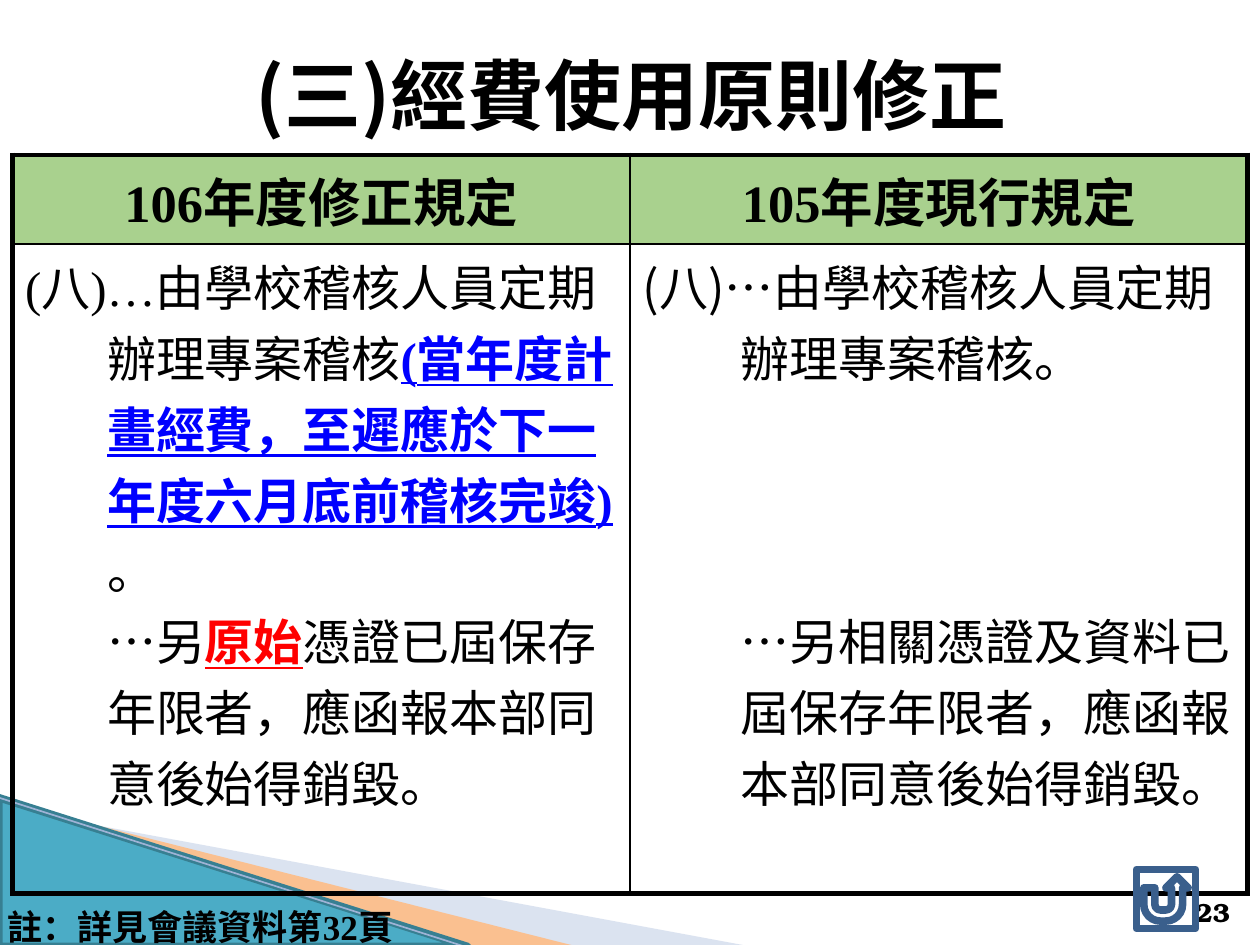
import pptx
import pptx.util
import pptx.dml.color
import pptx.enum.shapes
import pptx.enum.text
import pptx.oxml.ns
import lxml.etree

Pt = pptx.util.Pt
MID = pptx.enum.text.MSO_ANCHOR.MIDDLE
LOW = pptx.enum.text.MSO_ANCHOR.BOTTOM
ALIGN = pptx.enum.text.PP_ALIGN

THEME = {
    "black": "000000", "blue": "0000FF", "red": "FF0000", "head": "A9D18E",
    "teal": "4BACC6", "deep": "377F92", "pale": "A7B9DB", "peach": "FAC090",
    "ray": "9EB3D6", "icon": "3A5F8C",
    "sans": "Noto Sans CJK SC", "serif": "Times New Roman", "page": "TeX Gyre Bonum",
    "title": 44, "top": 30, "body": 28, "note": 20, "num": 15,
}

TITLE = "(三)經費使用原則修正"
HEADS = ["106年度修正規定", "105年度現行規定"]
NEW = {"color": "blue", "bold": True, "under": True}
KEY = {"color": "red", "bold": True, "under": True}
BODY = [
    {"font": "serif", "indent": 46.8, "paras": [
        (6, True, [("(八)…由學校稽核人員定期辦理專案稽核", {}),
                   ("(當年度計畫經費，至遲應於下一年度六月底前稽核完竣)", NEW)]),
        (0, False, [("。", {})]),
        (0, False, [("…另", {}), ("原始", KEY),
                    ("憑證已屆保存年限者，應函報本部同意後始得銷毀。", {})]),
    ]},
    {"font": "sans", "indent": 56.2, "paras": [
        (6, True, [("(八)…由學校稽核人員定期辦理專案稽核。", {})]),
        (121.5, False, [("…另相關憑證及資料已屆保存年限者，應函報本部同意後始得銷毀。", {})]),
    ]},
]
NOTE = "註：詳見會議資料第32頁"
PAGE = "23"
BANDS = [
    ("pale", 40, [(39.6, 468.7), (428.4, 540.7), (328.3, 540.7), (39.6, 468)]),
    ("peach", 100, [(38.2, 467.3), (329, 540.7), (267.8, 541.4), (38.9, 468)]),
]


def tone(name):
    return pptx.dml.color.RGBColor.from_string(THEME[name])


def sub(node, tag, **attrs):
    return lxml.etree.SubElement(node, pptx.oxml.ns.qn(tag), **attrs)


def write(para, text, size="body", font="serif", color="black", bold=False,
          under=False, align=None):
    run = para.add_run()
    run.text = text
    run.font.size = Pt(THEME[size])
    run.font.name = THEME[font]
    run.font.bold = bold
    run.font.underline = under
    run.font.color.rgb = tone(color)
    sub(run.font._element, "a:ea", typeface=THEME["sans"])
    if align is not None:
        para.alignment = align


def paint(shape, fill=None, line=None, width=4.33):
    shape.shadow.inherit = False
    if fill:
        shape.fill.solid()
        shape.fill.fore_color.rgb = tone(fill)
    else:
        shape.fill.background()
    if line:
        shape.line.color.rgb = tone(line)
        shape.line.width = Pt(width)
    else:
        shape.line.fill.background()


def edge(cell, row, col):
    props = cell._tc.get_or_add_tcPr()
    outer = {"L": col == 0, "R": col == 1, "T": row == 0, "B": row == 1}
    for spot, (side, thick) in enumerate(outer.items()):
        line = lxml.etree.Element(pptx.oxml.ns.qn("a:ln" + side), w=str(Pt(3 if thick else 1)))
        sub(sub(line, "a:solidFill"), "a:srgbClr", val=THEME["black"])
        props.insert(spot, line)


def decor(slide):
    for color, alpha, spots in BANDS:
        build = slide.shapes.build_freeform(*map(Pt, spots[0]))
        build.add_line_segments([(Pt(x), Pt(y)) for x, y in spots[1:]])
        band = build.convert_to_shape()
        paint(band, color)
        if alpha < 100:
            mark = band.fill._xPr.find(".//" + pptx.oxml.ns.qn("a:srgbClr"))
            sub(mark, "a:alpha", val=str(alpha * 1000))
    kind = pptx.enum.shapes.MSO_SHAPE.RIGHT_TRIANGLE
    wedge = slide.shapes.add_shape(kind, Pt(-0.7), Pt(455.8), Pt(267.8), Pt(85))
    paint(wedge, "teal", "deep")
    ray = slide.shapes.add_connector(pptx.enum.shapes.MSO_CONNECTOR.STRAIGHT,
                                     Pt(-0.7), Pt(455.8), Pt(267.1), Pt(541.4))
    ray.line.color.rgb = tone("ray")
    ray.line.width = Pt(0.95)
    sub(ray._element.spPr, "a:effectLst")


def grid(slide):
    frame = slide.shapes.add_table(2, 2, Pt(7.2), Pt(88.6), Pt(705.6), Pt(334.8))
    table = frame.table
    table.first_row = table.horz_banding = False
    for row, high in zip(table.rows, (49.7, 285.1)):
        row.height = Pt(high)
    for col, (head, body) in enumerate(zip(HEADS, BODY)):
        top, cell = table.cell(0, col), table.cell(1, col)
        top.fill.solid()
        top.fill.fore_color.rgb = tone("head")
        top.vertical_anchor = MID
        write(top.text_frame.paragraphs[0], head, "top", bold=True, align=ALIGN.CENTER)
        cell.fill.background()
        for rank, (gap, hang, runs) in enumerate(body["paras"]):
            text = cell.text_frame
            para = text.add_paragraph() if rank else text.paragraphs[0]
            para.space_before = Pt(gap)
            props = para._p.get_or_add_pPr()
            props.set("marL", str(Pt(body["indent"])))
            props.set("indent", str(-Pt(body["indent"]) if hang else 0))
            for words, style in runs:
                write(para, words, font=body["font"], **style)
        edge(top, 0, col)
        edge(cell, 1, col)


def label(slide, box, text, anchor=None, wrap=True, **style):
    frame = slide.shapes.add_textbox(*map(Pt, box)).text_frame
    frame.word_wrap = wrap
    if anchor is not None:
        frame.vertical_anchor = anchor
    write(frame.paragraphs[0], text, bold=True, **style)


def main():
    deck = pptx.Presentation()
    deck.slide_width, deck.slide_height = Pt(720), Pt(540)
    slide = deck.slides.add_slide(deck.slide_layouts[5])
    decor(slide)
    title = slide.shapes.title
    title.left, title.top, title.width, title.height = map(Pt, (20.2, 29.5, 681.1, 47.5))
    title.text_frame.vertical_anchor = MID
    write(title.text_frame.paragraphs[0], TITLE, "title", "sans", bold=True, align=ALIGN.CENTER)
    grid(slide)
    label(slide, (-2.9, 514.1, 249.1, 31.7), NOTE, size="note")
    label(slide, (666, 504.7, 43.9, 28.8), PAGE, LOW, size="num", font="page", align=ALIGN.RIGHT)
    kind = pptx.enum.shapes.MSO_SHAPE.ACTION_BUTTON_RETURN
    back = slide.shapes.add_shape(kind, Pt(649.4), Pt(496.8), Pt(33.8), Pt(33.8))
    paint(back, None, "icon")
    deck.save("out.pptx")


if __name__ == "__main__":
    main()
